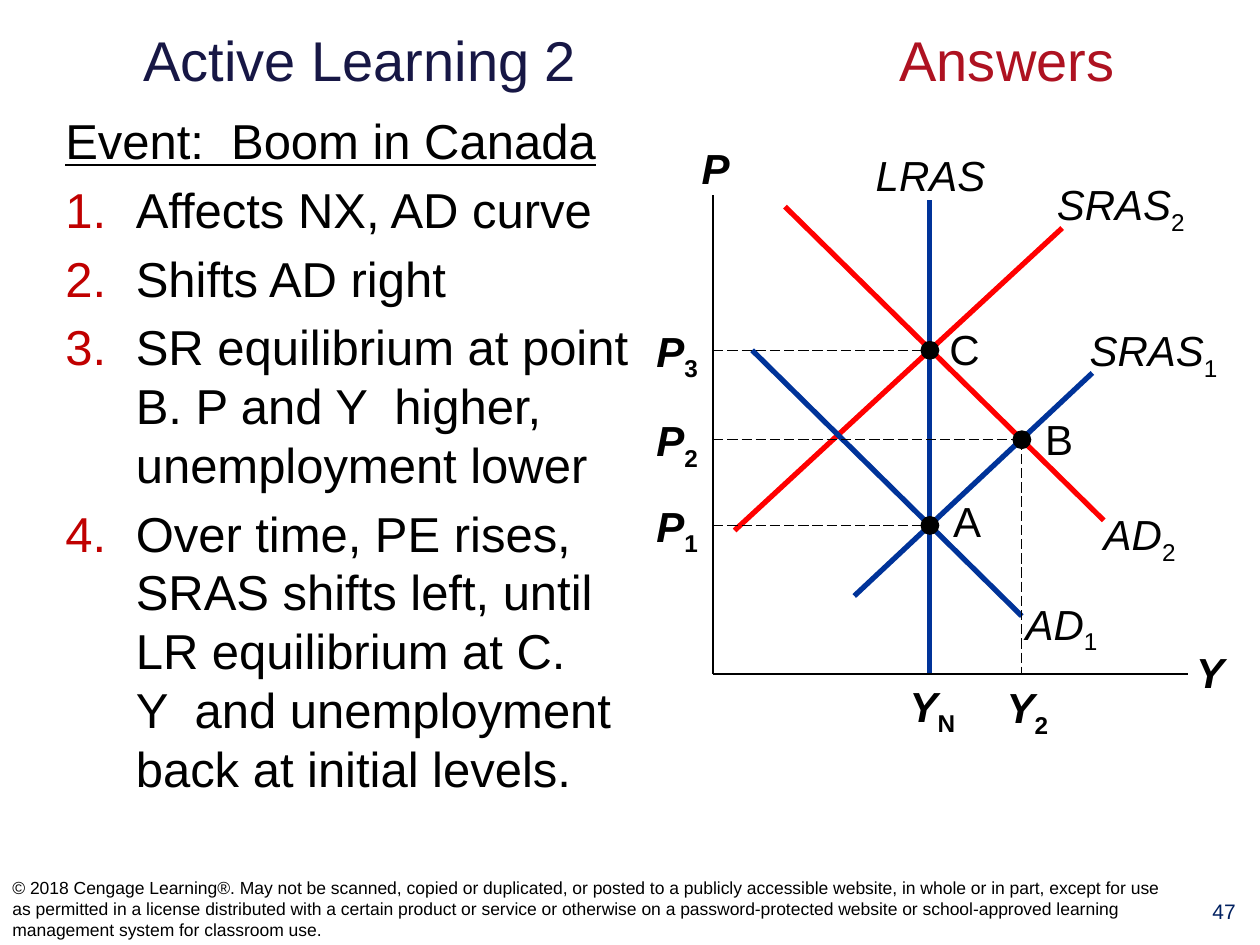
import pptx
import pptx.util
import pptx.dml.color
import pptx.enum.dml
import pptx.enum.shapes
import pptx.enum.text
import pptx.oxml
import pptx.oxml.ns
from pptx.util import Inches

NAVY, RED, BLUE, BLACK = "171745", "FF0000", "003399", "000000"
ALIGN = pptx.enum.text.PP_ALIGN
ANCHOR = pptx.enum.text.MSO_ANCHOR

# Axes, output levels and price levels on the graph
LEFT, BASE = 5.66, 5.35
YN, Y2 = 7.38, 8.11
P1, P2, P3 = 4.17, 3.49, 2.78


def color(code):
    return pptx.dml.color.RGBColor.from_string(code)


def add_node(parent, tag, **attrs):
    node = pptx.oxml.parse_xml(f"<a:{tag} {pptx.oxml.ns.nsdecls('a')}/>")
    for name, value in attrs.items():
        node.set(name, str(value))
    parent.append(node)
    return node


def add_box(slide, left, top, width, height, inset=None, middle=False):
    box = slide.shapes.add_textbox(*map(Inches, (left, top, width, height)))
    frame = box.text_frame
    frame.word_wrap = True
    if middle:
        frame.vertical_anchor = ANCHOR.MIDDLE
    if inset is not None:
        frame.margin_left = frame.margin_right = Inches(inset)
        frame.margin_top = frame.margin_bottom = Inches(inset)
    return frame


def add_text(para, text, size=24, code=BLACK, bold=False, italic=False,
             under=False, align=ALIGN.LEFT):
    """Add text to a paragraph; what follows "_" is a subscript."""
    para.alignment = align
    main, _, sub = text.partition("_")
    for part in filter(None, (main, sub)):
        run = para.add_run()
        run.text = part
        font = run.font
        font.name, font.size = "Arial", pptx.util.Pt(size)
        font.color.rgb = color(code)
        font.bold, font.underline = bold, under
        font.italic = italic and part is main
        if part is not main:
            run._r.get_or_add_rPr().set("baseline", "-25000")


def add_label(slide, text, left, top, width, inset=None, **style):
    height = 0.4 if inset == 0 else 0.5
    frame = add_box(slide, left, top, width, height, inset)
    add_text(frame.paragraphs[0], text, **{"align": ALIGN.CENTER, **style})


def add_line(slide, start, end, code=BLACK, width=3, dash=False):
    line = slide.shapes.add_connector(
        pptx.enum.shapes.MSO_CONNECTOR.STRAIGHT,
        *map(Inches, (*start, *end)))
    line.line.color.rgb = color(code)
    line.line.width = pptx.util.Pt(width)
    if dash:
        line.line.dash_style = pptx.enum.dml.MSO_LINE.LONG_DASH
    add_node(line._element.spPr, "effectLst")


def add_dot(slide, x, y, size=0.15):
    dot = slide.shapes.add_shape(
        pptx.enum.shapes.MSO_SHAPE.OVAL,
        *map(Inches, (x - size / 2, y - size / 2, size, size)))
    dot.shadow.inherit = False
    dot.fill.solid()
    dot.fill.fore_color.rgb = color(BLACK)
    dot.line.fill.background()


def add_title(slide):
    frame = add_box(slide, 0.73, 0.11, 8.53, 0.72, middle=True)
    frame.margin_left = Inches(0.41)
    para = frame.paragraphs[0]
    tabs = add_node(para._p.get_or_add_pPr(), "tabLst")
    add_node(tabs, "tab", pos=Inches(6), algn="l")
    add_text(para, "Active Learning 2\t", size=32, code=NAVY)
    add_text(para, "Answers", size=32, code="AE1221")


def add_steps(slide):
    frame = add_box(slide, 0.42, 0.83, 4.8, 5.92)
    add_text(frame.paragraphs[0], "Event:  Boom in Canada", size=28, under=True)
    steps = (
        ["Affects NX, AD curve"],
        ["Shifts AD right"],
        ["SR equilibrium at point B. P and Y  higher, unemployment lower"],
        ["Over time, PE rises, SRAS shifts left, until LR equilibrium at C.",
         "Y  and unemployment back at initial levels."],
    )
    for step in steps:
        para = frame.add_paragraph()
        para.space_before = pptx.util.Pt(5.6)
        props = para._p.get_or_add_pPr()
        props.set("marL", str(Inches(0.56)))
        props.set("indent", str(-Inches(0.56)))
        add_node(add_node(props, "buClr"), "srgbClr", val="C00000")
        add_node(props, "buAutoNum", type="arabicPeriod")
        for i, part in enumerate(step):
            if i:
                para.add_line_break()
            add_text(para, part, size=28)


def add_graph(slide):
    # Long-run supply and axes
    add_line(slide, (YN, 1.59), (YN, BASE), BLUE)
    add_line(slide, (LEFT, 1.55), (LEFT, BASE), width=1)
    add_line(slide, (LEFT, BASE), (9.43, BASE), width=1)

    # Demand and short-run supply curves
    for start, end, code in (
            ((6.23, 1.64), (8.76, 4.13), RED),
            ((5.83, 4.21), (8.43, 1.81), RED),
            ((5.97, 2.78), (8.11, 4.89), BLUE),
            ((6.78, 4.73), (8.67, 2.96), BLUE)):
        add_line(slide, start, end, code)

    # Curve names
    for text, left, top, width in (
            ("LRAS", 6.74, 1.14, 1.29), ("SRAS_2", 8.25, 1.37, 1.29),
            ("SRAS_1", 8.51, 2.53, 1.29), ("AD_2", 8.64, 3.99, 0.81),
            ("AD_1", 8.03, 4.7, 0.79)):
        add_label(slide, text, left, top, width, italic=True)

    # Axis names
    bold = {"bold": True, "italic": True}
    add_label(slide, "P", 5.47, 1.08, 0.42, **bold)
    add_label(slide, "Y", 9.38, 5.08, 0.45, **bold)
    add_label(slide, "Y_N", 7.12, 5.35, 0.62, align=ALIGN.LEFT, **bold)
    add_label(slide, "Y_2", 7.89, 5.41, 0.53, inset=0, **bold)

    # Equilibrium points with their price levels
    add_line(slide, (Y2, P2), (Y2, BASE), width=0.75, dash=True)
    for name, price, x, y, left, top in (
            ("A", "P_1", YN, P1, 7.5, 3.93),
            ("B", "P_2", Y2, P2, 8.23, 3.28),
            ("C", "P_3", YN, P3, 7.48, 2.57)):
        add_line(slide, (LEFT, y), (x, y), width=0.75, dash=True)
        add_dot(slide, x, y)
        add_label(slide, price, 5.11, y - 0.2, 0.53, inset=0, **bold)
        add_label(slide, name, left, top, 0.35, inset=0)


def add_footer(slide):
    frame = add_box(slide, 0, 6.92, 9.41, 0.58, middle=True)
    add_text(frame.paragraphs[0],
             "© 2018 Cengage Learning®. May not be scanned, copied or "
             "duplicated, or posted to a publicly accessible website, in whole "
             "or in part, except for use as permitted in a license distributed "
             "with a certain product or service or otherwise on a "
             "password-protected website or school-approved learning "
             "management system for classroom use.", size=10)
    add_label(slide, "47", 9.43, 7.08, 0.57, size=12, code="002060")


def main():
    deck = pptx.Presentation()
    deck.slide_width, deck.slide_height = Inches(10), Inches(7.5)
    slide = deck.slides.add_slide(deck.slide_layouts[6])
    add_title(slide)
    add_steps(slide)
    add_graph(slide)
    add_footer(slide)
    deck.save("out.pptx")


if __name__ == "__main__":
    main()
